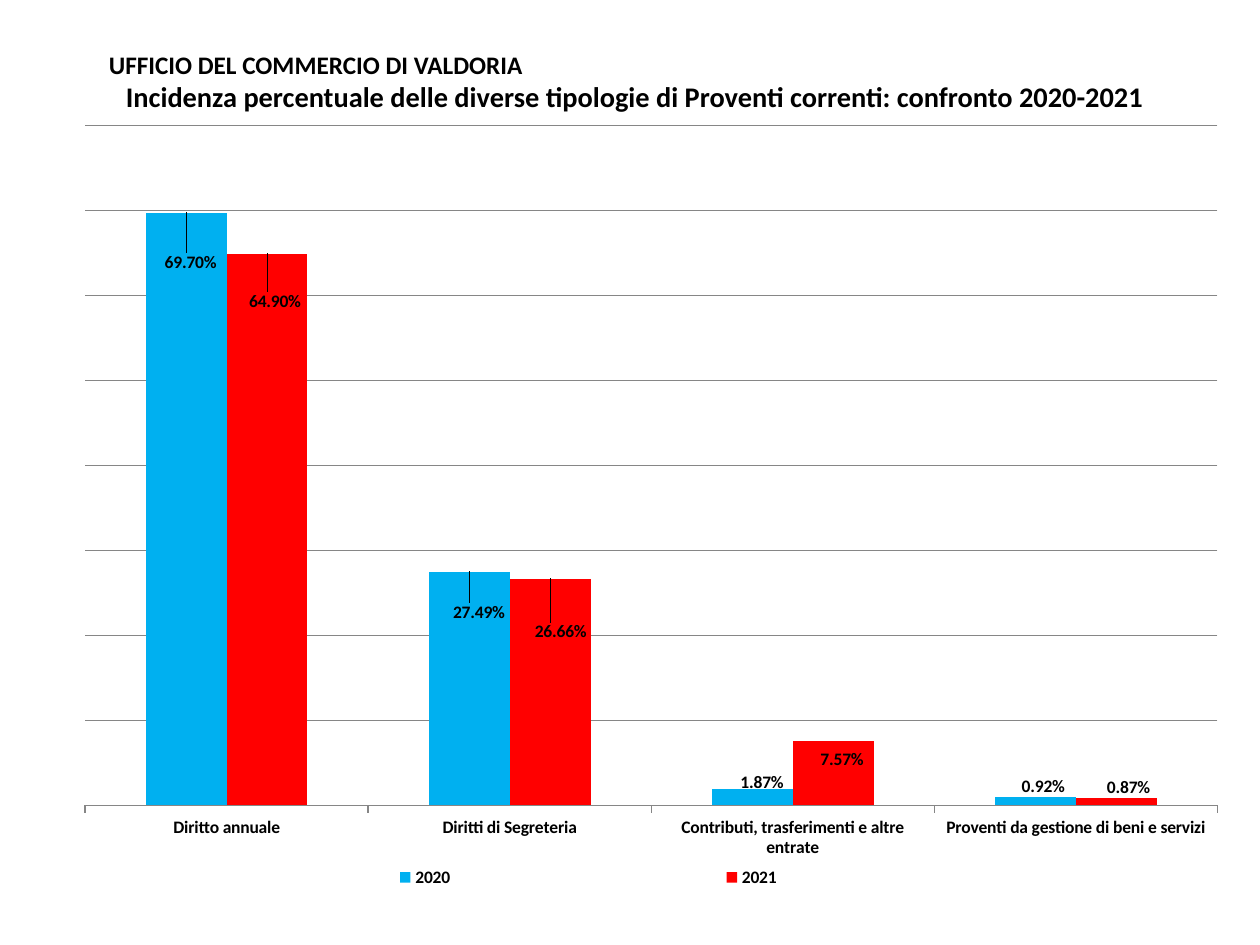
import pptx
import pptx.chart.data
import pptx.dml.color
import pptx.enum.chart
import pptx.enum.text
import pptx.oxml
import pptx.oxml.ns
import pptx.util

Pt = pptx.util.Pt
COLORS = {"text": "000000", "grid": "868686", "2020": "00B0F0", "2021": "FF0000"}
CATEGORIES = [
    "Diritto annuale",
    "Diritti di Segreteria",
    "Contributi, trasferimenti e altre entrate",
    "Proventi da gestione di beni e servizi",
]
SHARES = {
    "2020": [0.697, 0.2749, 0.0187, 0.0092],
    "2021": [0.649, 0.2666, 0.0757, 0.0087],
}
# Right and down shift of each label from its place above the column, in points
LABEL_SHIFTS = {
    "2020": [(2.5, 37), (5.5, 32), (5.5, 4.5), (4.5, 2.5)],
    "2021": [(4.5, 36), (6, 39), (5, 19), (7, 2.5)],
}
PERCENT = "0.00%"


def rgb(name):
    return pptx.dml.color.RGBColor.from_string(COLORS[name])


def format_font(font, size, bold=True, color="text"):
    font.name = "Calibri"
    font.size = Pt(size)
    font.bold = bold
    font.color.rgb = rgb(color)


def write_text(paragraph, text, size, align="CENTER", indent=0, **font_format):
    run = paragraph.add_run()
    run.text = text
    format_font(run.font, size, **font_format)
    paragraph.alignment = getattr(pptx.enum.text.PP_ALIGN, align)
    paragraph.line_spacing = 1.0
    paragraph.space_before = Pt(0)
    properties = paragraph._p.get_or_add_pPr()
    properties.set("marL", str(Pt(indent)))
    properties.set("indent", "0")


def manual_layout(**values):
    """Return a c:layout element; keyword order follows the chart schema."""
    parts = "".join(f'<c:{tag} val="{value}"/>' for tag, value in values.items())
    return pptx.oxml.parse_xml(
        f'<c:layout {pptx.oxml.ns.nsdecls("c")}>'
        f"<c:manualLayout>{parts}</c:manualLayout></c:layout>"
    )


def replace_layout(parent, layout, before=None, after=None):
    """Put the layout next to the named child, in place of any earlier one."""
    qn = pptx.oxml.ns.qn
    for old in parent.findall(qn("c:layout")):
        parent.remove(old)
    if after:
        parent.find(qn(after)).addnext(layout)
    else:
        parent.find(qn(before)).addprevious(layout)


def hide_leader_lines(labels_element):
    labels_element.append(pptx.oxml.parse_xml(
        f'<c:extLst {pptx.oxml.ns.nsdecls("c")}>'
        '<c:ext uri="{CE6537A1-D6FC-4f65-9D91-7224C49458BB}" '
        'xmlns:c15="http://schemas.microsoft.com/office/drawing/2012/chart">'
        '<c15:showLeaderLines val="0"/></c:ext></c:extLst>'
    ))


class SlideBuilder:
    def __init__(self, presentation):
        self.slide = presentation.slides.add_slide(presentation.slide_layouts[5])
        self.size = 10

    def title(self, left, top, width, height, lines):
        shape = self.slide.shapes.title
        shape.left, shape.top = Pt(left), Pt(top)
        shape.width, shape.height = Pt(width), Pt(height)
        frame = shape.text_frame
        frame.word_wrap = True
        frame.auto_size = pptx.enum.text.MSO_AUTO_SIZE.NONE
        frame.vertical_anchor = pptx.enum.text.MSO_ANCHOR.MIDDLE
        for index, line in enumerate(lines):
            paragraph = frame.add_paragraph() if index else frame.paragraphs[0]
            write_text(paragraph, **line)

    def column_chart(self, left, top, width, height):
        data = pptx.chart.data.CategoryChartData(number_format=PERCENT)
        data.categories = CATEGORIES
        for year, values in SHARES.items():
            data.add_series(year, values)
        chart = self.slide.shapes.add_chart(
            pptx.enum.chart.XL_CHART_TYPE.COLUMN_CLUSTERED,
            Pt(left), Pt(top), Pt(width), Pt(height), data,
        ).chart
        chart.has_title = False
        format_font(chart.font, self.size, bold=False)
        plot = chart.plots[0]
        plot.gap_width = 150
        plot.overlap = 0
        plot.vary_by_categories = False
        for series in plot.series:
            series.format.fill.solid()
            series.format.fill.fore_color.rgb = rgb(series.name)
            self.labels(series, width, height)
        self.axes(chart)
        self.legend(chart)
        area = manual_layout(layoutTarget="inner", xMode="edge", yMode="edge",
                             x=0.001, y=0, w=0.999, h=0.868)
        replace_layout(chart._chartSpace.chart.plotArea, area, before="c:barChart")

    def labels(self, series, width, height):
        position = pptx.enum.chart.XL_LABEL_POSITION.OUTSIDE_END
        labels = series.data_labels
        labels.show_value = True
        labels.number_format = PERCENT
        labels.number_format_is_linked = False
        labels.position = position
        format_font(labels.font, self.size)
        for index in range(len(CATEGORIES)):
            label = series.points[index].data_label
            format_font(label.font, self.size)
            label.position = position
        shifts = LABEL_SHIFTS[series.name]
        elements = labels._element.findall(pptx.oxml.ns.qn("c:dLbl"))
        for element, (right, down) in zip(elements, shifts):
            layout = manual_layout(x=right / width, y=down / height)
            replace_layout(element, layout, after="c:idx")
            layout.addnext(pptx.oxml.parse_xml(
                f'<c:numFmt {pptx.oxml.ns.nsdecls("c")} '
                f'formatCode="{PERCENT}" sourceLinked="0"/>'
            ))
        hide_leader_lines(labels._element)

    def axes(self, chart):
        tick_mark = pptx.enum.chart.XL_TICK_MARK
        category_axis, value_axis = chart.category_axis, chart.value_axis
        category_axis.major_tick_mark = tick_mark.OUTSIDE
        category_axis.minor_tick_mark = tick_mark.NONE
        format_font(category_axis.tick_labels.font, self.size)
        value_axis.minimum_scale = 0
        value_axis.maximum_scale = 0.8
        value_axis.major_unit = 0.1
        value_axis.has_major_gridlines = True
        value_axis.tick_labels.number_format = PERCENT
        value_axis.tick_labels.number_format_is_linked = False
        value_axis.visible = False
        for line in (category_axis.format.line, value_axis.major_gridlines.format.line):
            line.color.rgb = rgb("grid")
            line.width = Pt(0.75)

    def legend(self, chart):
        chart.has_legend = True
        legend = chart.legend
        legend.position = pptx.enum.chart.XL_LEGEND_POSITION.RIGHT
        legend.include_in_layout = False
        format_font(legend.font, self.size)
        layout = manual_layout(xMode="edge", yMode="edge",
                               x=0.04, y=0.94, w=0.81, h=0.04)
        replace_layout(legend._element, layout, after="c:legendPos")


def main():
    presentation = pptx.Presentation()
    presentation.slide_width, presentation.slide_height = Pt(720), Pt(540)
    builder = SlideBuilder(presentation)
    builder.title(36, 21.6, 653, 49.7, [
        {"text": "UFFICIO DEL COMMERCIO DI VALDORIA",
         "size": 14.4, "align": "LEFT", "indent": 19},
        {"text": "Incidenza percentuale delle diverse tipologie di Proventi correnti: "
                 "confronto 2020-2021", "size": 16.2},
    ])
    builder.column_chart(48, 71.3, 648, 448)
    presentation.save("out.pptx")


if __name__ == "__main__":
    main()
